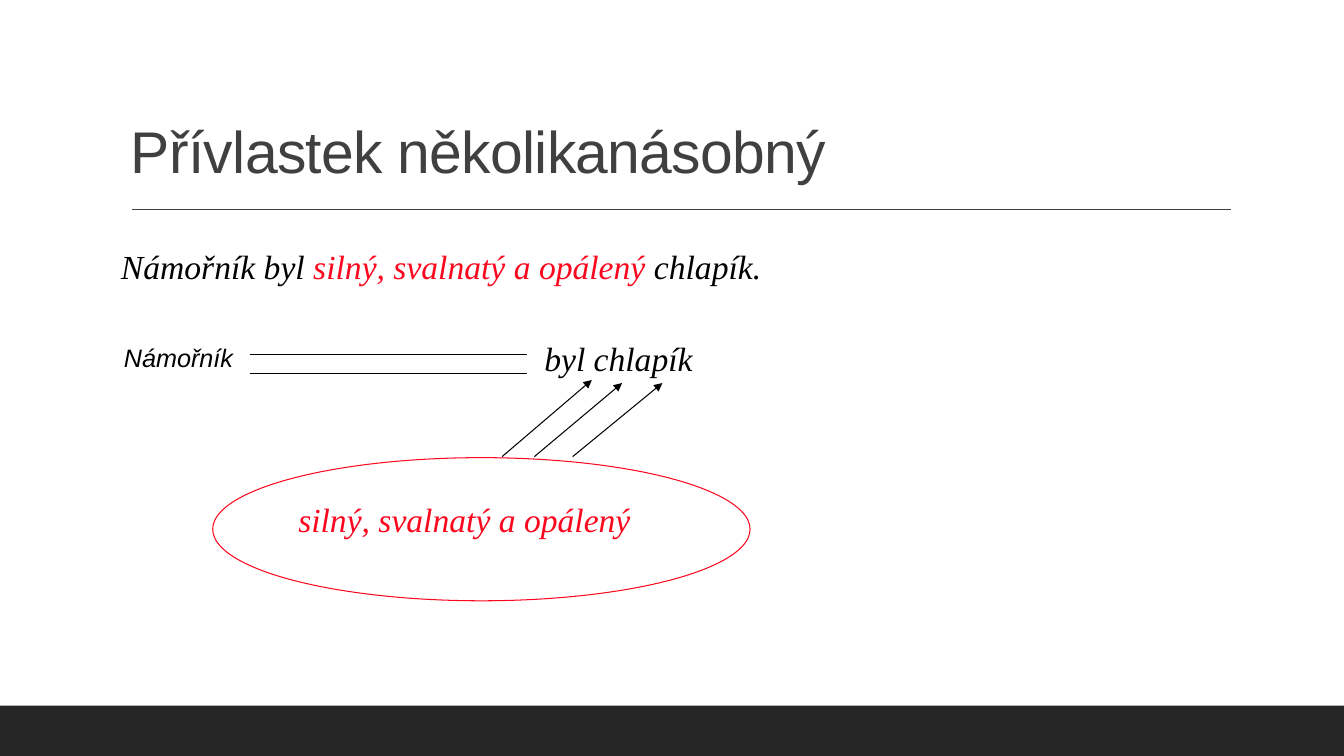
from lxml import etree
from pptx import Presentation
from pptx.dml.color import RGBColor
from pptx.enum.shapes import MSO_CONNECTOR, MSO_SHAPE
from pptx.enum.text import MSO_ANCHOR
from pptx.oxml.ns import qn
from pptx.util import Inches, Pt

LINE = MSO_CONNECTOR.STRAIGHT
RECT, OVAL = MSO_SHAPE.RECTANGLE, MSO_SHAPE.OVAL
TOP, BOTTOM = MSO_ANCHOR.TOP, MSO_ANCHOR.BOTTOM
COLORS = {"ink": "000000", "red": "FB071E", "gray": "404040", "dark": "262626"}
SERIF = {"name": "Times New Roman", "size": Pt(24), "italic": True}
SANS = {"name": "Arial", "size": Pt(18), "italic": True}
TITLE = {"name": "Arial", "size": Pt(42)}
CELL = 0.1


def put(item, form):
    for key, value in form.items():
        setattr(item, key, value)


def grid(*cells):
    return [Inches(cell * CELL) for cell in cells]


def tint(name):
    return RGBColor.from_string(COLORS[name])


class Board:
    def __init__(self, deck):
        self.slide = deck.slides.add_slide(deck.slide_layouts[6])
        self.shapes = self.slide.shapes

    def text(self, spot, runs, font, frame=None, para=None, track=0):
        box = self.shapes.add_textbox(*grid(*spot)).text_frame
        put(box, {"word_wrap": True, "vertical_anchor": TOP, **(frame or {})})
        line = box.paragraphs[0]
        put(line, para or {})
        for words, color in runs:
            run = line.add_run()
            run.text = words
            put(run.font, font)
            run.font.color.rgb = tint(color)
            if track:
                run.font._element.set("spc", str(track))

    def shape(self, kind, spot, fill=None, edge=None):
        item = self.shapes.add_shape(kind, *grid(*spot))
        item.shadow.inherit = False
        if fill:
            item.fill.solid()
            item.fill.fore_color.rgb = tint(fill)
        else:
            item.fill.background()
        if edge:
            item.line.color.rgb = tint(edge)
            item.line.width = Pt(0.75)
        else:
            item.line.fill.background()

    def line(self, ends, color="ink", width=0.75, arrow=False):
        item = self.shapes.add_connector(LINE, *grid(*ends))
        item.line.color.rgb = tint(color)
        item.line.width = Pt(width)
        props = item._element.spPr
        if arrow:
            stroke = props.find(qn("a:ln"))
            etree.SubElement(stroke, qn("a:tailEnd"), type="triangle")
        etree.SubElement(props, qn("a:effectLst"))


def main():
    deck = Presentation()
    put(deck, {"slide_width": Inches(13.33), "slide_height": Inches(7.5)})
    board = Board(deck)
    traits = ("silný, svalnatý a opálený", "red")
    loose = {"word_wrap": False}

    board.shape(RECT, (0, 70, 133.3, 5), fill="dark")
    board.line((13.1, 20.8, 122.1, 20.8), "gray", 1)
    board.text((12, 3.1, 110, 15.9), [("Přívlastek několikanásobný", "gray")],
               TITLE, {"vertical_anchor": BOTTOM}, {"line_spacing": 0.9}, -50)
    board.text((12, 23.1, 110, 41.1),
               [("Námořník byl ", "ink"), traits, (" chlapík.", "ink")],
               SERIF, {"margin_left": 0, "margin_right": 0},
               {"line_spacing": 1.2, "space_after": Pt(2)})

    board.text((11.3, 33.5, 13.5, 4), [("Námořník", "ink")], SANS)
    for row in (35.2, 37.1):
        board.line((24.8, row, 52.3, row))
    board.text((53, 33, 17.1, 5), [("byl chlapík", "ink")], SERIF, loose)

    board.text((28.6, 49, 35.5, 5), [traits], SERIF, loose)
    board.shape(OVAL, (21.1, 45.4, 53.3, 14.2), edge="red")
    for start, end, tip in ((53, 61.7, 38), (56.8, 65.7, 38), (49.8, 58.7, 37.7)):
        board.line((start, 45.3, end, tip), arrow=True)
    deck.save("out.pptx")


if __name__ == "__main__":
    main()
